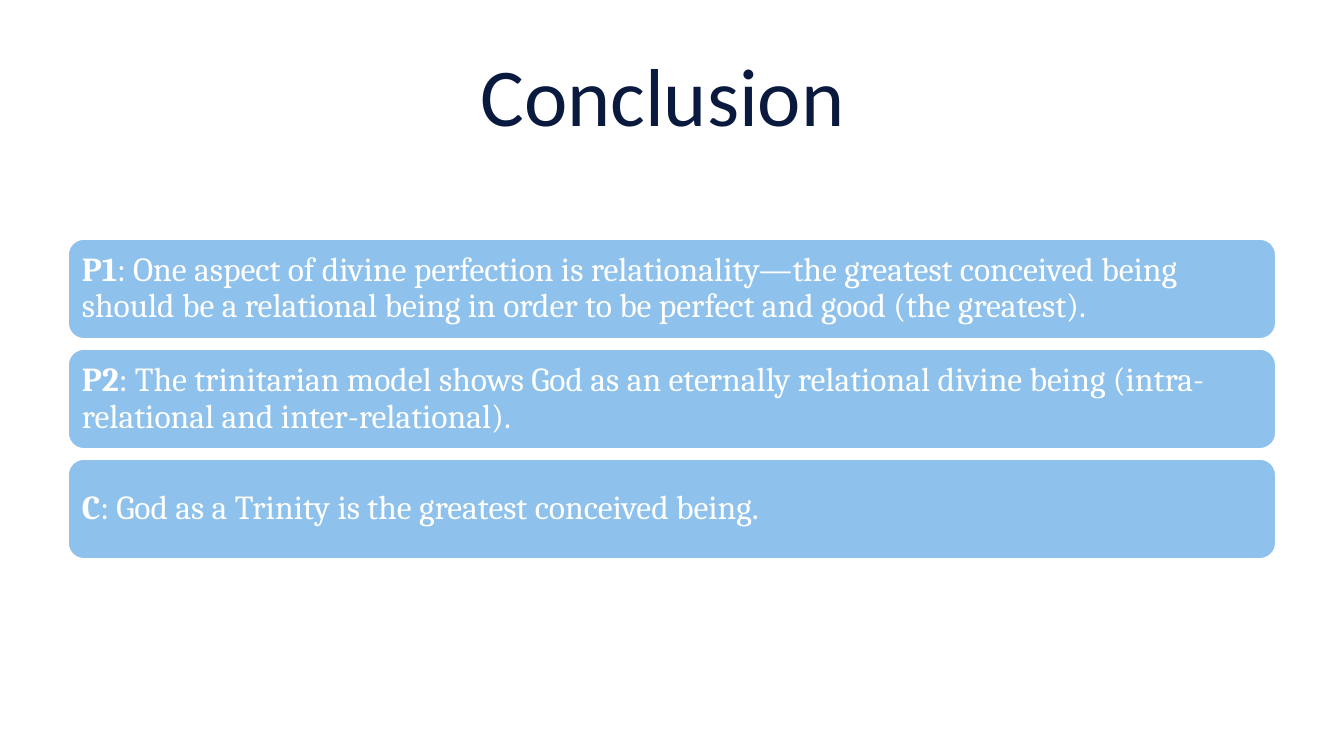
from pptx import Presentation
from pptx.dml.color import RGBColor
from pptx.enum.shapes import MSO_SHAPE
from pptx.enum.text import MSO_ANCHOR, PP_ALIGN
from pptx.util import Emu, Pt

ROUND = MSO_SHAPE.ROUNDED_RECTANGLE
MIDDLE = MSO_ANCHOR.MIDDLE
LEFT, CENTER = PP_ALIGN.LEFT, PP_ALIGN.CENTER

SCALE = 914400 / 134.4
WHITE, NAVY, SKY = "FFFFFF", "0A193E", "8EC1EB"
EDGE, WIDTH = 67, 1210
TOP, HEIGHT, STEP = 238, 102, 110

POINTS = [
    ("P1", ": One aspect of divine perfection is relationality—the greatest "
           "conceived being should be a relational being in order to be "
           "perfect and good (the greatest)."),
    ("P2", ": The trinitarian model shows God as an eternally relational "
           "divine being (intra-relational and inter-relational)."),
    ("C", ": God as a Trinity is the greatest conceived being."),
]


def px(n):
    return Emu(round(n * SCALE))


def paint(color, code):
    color.rgb = RGBColor.from_string(code)


def fill(shape, code):
    shape.fill.solid()
    paint(shape.fill.fore_color, code)


def add_run(para, text, face, size, code, bold=False):
    run = para.add_run()
    run.text = text
    run.font.name = face
    run.font.size = Pt(size)
    run.font.bold = bold
    paint(run.font.color, code)


def set_title(slide, text):
    title = slide.shapes.title
    title.left, title.top = px(EDGE), px(31)
    title.width, title.height = px(WIDTH), px(126)
    fill(title, WHITE)
    frame = title.text_frame
    frame.vertical_anchor = MIDDLE
    para = frame.paragraphs[0]
    para.alignment = CENTER
    add_run(para, text, "Calibri", 44, NAVY)


def add_bar(slide, top, label, text):
    bar = slide.shapes.add_shape(ROUND, px(EDGE), px(top), px(WIDTH), px(HEIGHT))
    bar.shadow.inherit = False
    fill(bar, SKY)
    paint(bar.line.color, WHITE)
    bar.line.width = Pt(2)
    frame = bar.text_frame
    frame.word_wrap = True
    frame.vertical_anchor = MIDDLE
    # The rounded corner already insets the text by about 5 px.
    frame.margin_left = frame.margin_right = px(10)
    frame.margin_top = frame.margin_bottom = px(9)
    para = frame.paragraphs[0]
    para.alignment = LEFT
    para.line_spacing = 0.9
    add_run(para, label, "Cambria", 18, WHITE, True)
    add_run(para, text, "Cambria", 18, WHITE)


def main():
    deck = Presentation()
    deck.slide_width, deck.slide_height = px(1344), px(756)
    slide = deck.slides.add_slide(deck.slide_layouts[5])
    set_title(slide, "Conclusion ")
    for i, (label, text) in enumerate(POINTS):
        add_bar(slide, TOP + i * STEP, label, text)
    deck.save("out.pptx")


if __name__ == "__main__":
    main()
